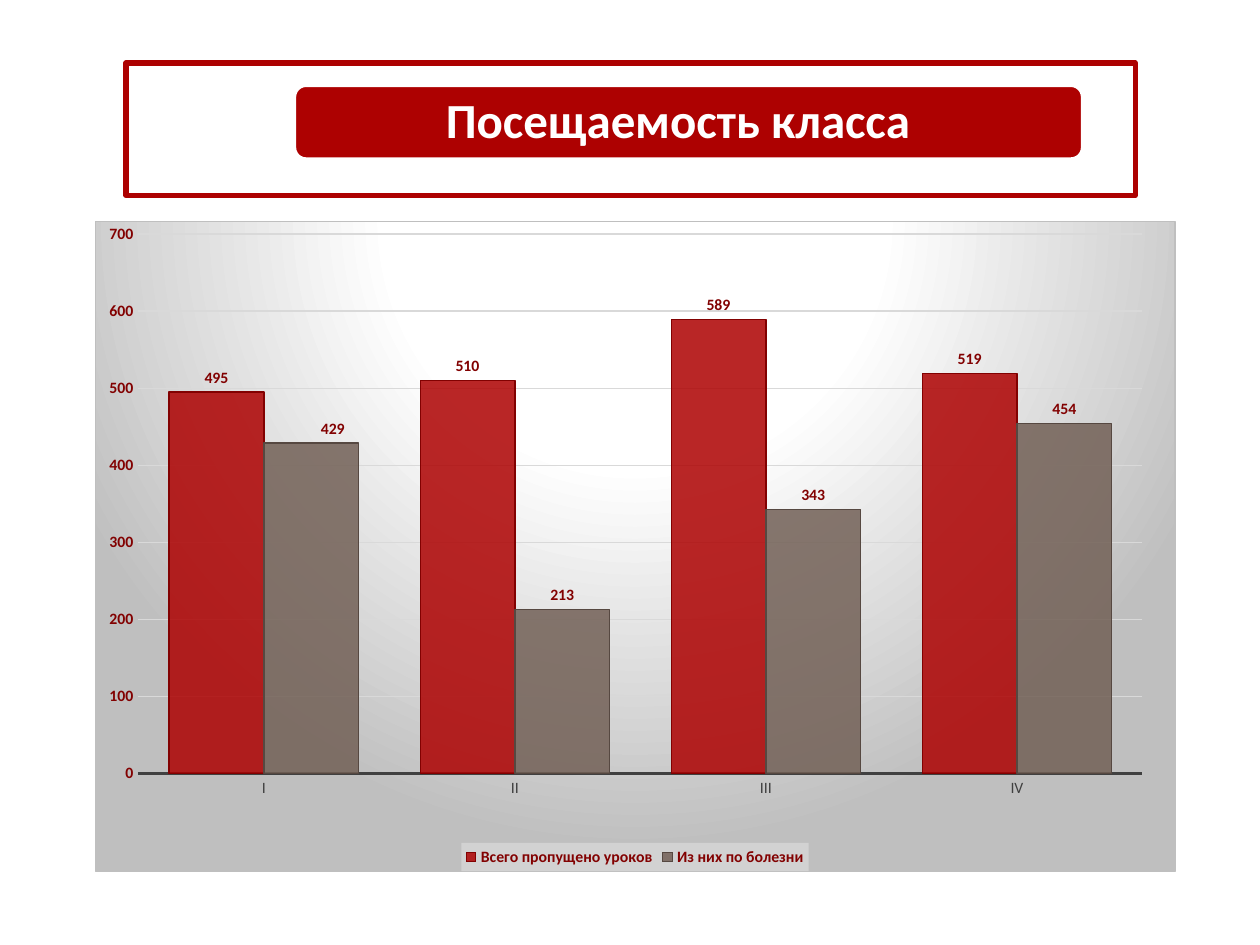
from lxml import etree
from pptx import Presentation
from pptx import util as u
from pptx.chart.data import CategoryChartData
from pptx.dml.color import RGBColor
from pptx.enum import chart as charts, shapes, text
from pptx.oxml import parse_xml
from pptx.oxml.ns import nsdecls, qn

TITLE = "Посещаемость класса"
CATEGORIES = ["I", "II", "III", "IV"]
SERIES = [
    {"name": "Всего пропущено уроков", "values": [495, 510, 589, 519], "fill": "AD0101", "line": "820101"},
    {"name": "Из них по болезни", "values": [429, 213, 343, 454], "fill": "726056", "line": "564841"},
]
FRAMES = [
    {"kind": shapes.MSO_SHAPE.RECTANGLE, "box": (1, 0.5, 8.01, 1.05), "fill": "FFFFFF", "line": "AD0101", "alpha": 90},
    {"kind": shapes.MSO_SHAPE.ROUNDED_RECTANGLE, "box": (2.33, 0.67, 6.27, 0.6), "fill": "AD0101", "line": "FFFFFF", "alpha": 100},
]
TITLE_BOX = (2.36, 0.7, 6.21, 0.55)
CHART_BOX = (0.75, 1.75, 8.58, 5.17)
PLOT_LAYOUT = {"x": 0.04, "y": 0.02, "w": 0.93, "h": 0.83}
GRADIENT = [(0, "FFFFFF"), (39, "FFFFFF"), (100, "BFBFBF")]
LABEL_FONT = {"size": u.Pt(9), "bold": True, "name": "Calibri"}
CATEGORY_FONT = {"size": u.Pt(9), "bold": False, "name": "Calibri"}
TITLE_FONT = {"size": u.Pt(28), "bold": True, "name": "Calibri"}
FRAME_FORMAT = {"word_wrap": True, "auto_size": text.MSO_AUTO_SIZE.NONE,
                "vertical_anchor": text.MSO_ANCHOR.MIDDLE,
                "margin_left": u.Inches(0.21), "margin_right": u.Inches(0.38),
                "margin_top": 0, "margin_bottom": 0}


def color(value):
    return RGBColor.from_string(value)


def apply(target, values):
    for name, value in values.items():
        setattr(target, name, value)


def set_font(font, values, value):
    apply(font, values)
    font.color.rgb = color(value)


def set_fill(fill, value, alpha=100):
    fill.solid()
    fill.fore_color.rgb = color(value)
    if alpha < 100:
        element = fill._xPr.find(".//" + qn("a:srgbClr"))
        etree.SubElement(element, qn("a:alpha")).set("val", str(alpha * 1000))


def set_line(line, value, width):
    line.color.rgb = color(value)
    line.width = u.Pt(width)


def manual_layout(values, modes=""):
    parts = "".join(f'<c:{name} val="{value}"/>' for name, value in values.items())
    return parse_xml(f'<c:layout {nsdecls("c")}><c:manualLayout>{modes}{parts}</c:manualLayout></c:layout>')


def add_frame(slide, frame):
    shape = slide.shapes.add_shape(frame["kind"], *map(u.Inches, frame["box"]))
    shape.shadow.inherit = False
    set_fill(shape.fill, frame["fill"], frame["alpha"])
    set_line(shape.line, frame["line"], 3)


def add_title(slide):
    title = slide.shapes.title
    apply(title, dict(zip(("left", "top", "width", "height"), map(u.Inches, TITLE_BOX))))
    apply(title.text_frame, FRAME_FORMAT)
    paragraph = title.text_frame.paragraphs[0]
    paragraph.text = TITLE
    apply(paragraph, {"alignment": text.PP_ALIGN.CENTER, "line_spacing": 0.9})
    set_font(paragraph.runs[0].font, TITLE_FONT, "FFFFFF")
    slide.shapes._spTree.append(title._element)


def format_background(chart):
    stops = "".join(f'<a:gs pos="{position * 1000}"><a:srgbClr val="{value}"/></a:gs>'
                    for position, value in GRADIENT)
    background = parse_xml(
        f'<c:spPr {nsdecls("c", "a")}><a:gradFill><a:gsLst>{stops}</a:gsLst><a:path path="circle">'
        '<a:fillToRect l="50000" t="-80000" r="50000" b="180000"/></a:path></a:gradFill>'
        '<a:ln w="9525"><a:solidFill><a:srgbClr val="BFBFBF"/></a:solidFill></a:ln></c:spPr>')
    chart._chartSpace.find(qn("c:chart")).addnext(background)
    plot_area = chart._chartSpace.find(".//" + qn("c:plotArea"))
    for layout in plot_area.findall(qn("c:layout")):
        plot_area.remove(layout)
    modes = '<c:layoutTarget val="inner"/><c:xMode val="edge"/><c:yMode val="edge"/>'
    plot_area.insert(0, manual_layout(PLOT_LAYOUT, modes))


def format_axes(chart):
    for axis in (chart.category_axis, chart.value_axis):
        apply(axis, {"major_tick_mark": charts.XL_TICK_MARK.NONE, "minor_tick_mark": charts.XL_TICK_MARK.NONE})
    set_font(chart.category_axis.tick_labels.font, CATEGORY_FONT, "404040")
    set_line(chart.category_axis.format.line, "404040", 1.5)
    value_axis = chart.value_axis
    apply(value_axis, {"minimum_scale": 0, "maximum_scale": 700, "major_unit": 100})
    set_font(value_axis.tick_labels.font, LABEL_FONT, "820101")
    apply(value_axis.tick_labels, {"number_format": "0", "number_format_is_linked": False})
    value_axis.format.line.fill.background()
    set_line(value_axis.major_gridlines.format.line, "D9D9D9", 0.75)


def format_legend(chart):
    chart.has_legend = True
    apply(chart.legend, {"position": charts.XL_LEGEND_POSITION.BOTTOM, "include_in_layout": False})
    set_font(chart.legend.font, LABEL_FONT, "820101")
    legend_fill = parse_xml(
        f'<c:spPr {nsdecls("c", "a")}><a:solidFill><a:srgbClr val="F2F2F2">'
        '<a:alpha val="39000"/></a:srgbClr></a:solidFill></c:spPr>')
    chart.legend._element.find(qn("c:txPr")).addprevious(legend_fill)


def format_series(series, row):
    set_fill(series.format.fill, row["fill"], 85)
    set_line(series.format.line, row["line"], 0.75)
    series.invert_if_negative = False
    labels = series.data_labels
    apply(labels, {"show_value": True, "number_format": "0", "number_format_is_linked": False,
                   "position": charts.XL_LABEL_POSITION.OUTSIDE_END})
    set_font(labels.font, LABEL_FONT, "820101")


def add_chart(slide):
    data = CategoryChartData(number_format="0")
    data.categories = CATEGORIES
    for row in SERIES:
        data.add_series(row["name"], row["values"])
    chart = slide.shapes.add_chart(charts.XL_CHART_TYPE.COLUMN_CLUSTERED, *map(u.Inches, CHART_BOX), data).chart
    chart.has_title = False
    set_font(chart.font, {"size": u.Pt(10), "name": "Calibri"}, "000000")
    format_background(chart)
    format_axes(chart)
    format_legend(chart)
    plot = chart.plots[0]
    apply(plot, {"gap_width": 65, "overlap": 0, "vary_by_categories": False})
    for series, row in zip(plot.series, SERIES):
        format_series(series, row)
    shifted = plot.series[1].points[0].data_label
    set_font(shifted.font, LABEL_FONT, "820101")
    shifted.position = charts.XL_LABEL_POSITION.OUTSIDE_END
    label = plot.series[1]._element.find(".//" + qn("c:dLbl"))
    label.insert(1, manual_layout({"x": 0.02, "y": 0}))


def main():
    presentation = Presentation()
    apply(presentation, {"slide_width": u.Inches(10), "slide_height": u.Inches(7.5)})
    slide = presentation.slides.add_slide(presentation.slide_layouts[5])
    for frame in FRAMES:
        add_frame(slide, frame)
    add_title(slide)
    add_chart(slide)
    presentation.save("out.pptx")


if __name__ == "__main__":
    main()
